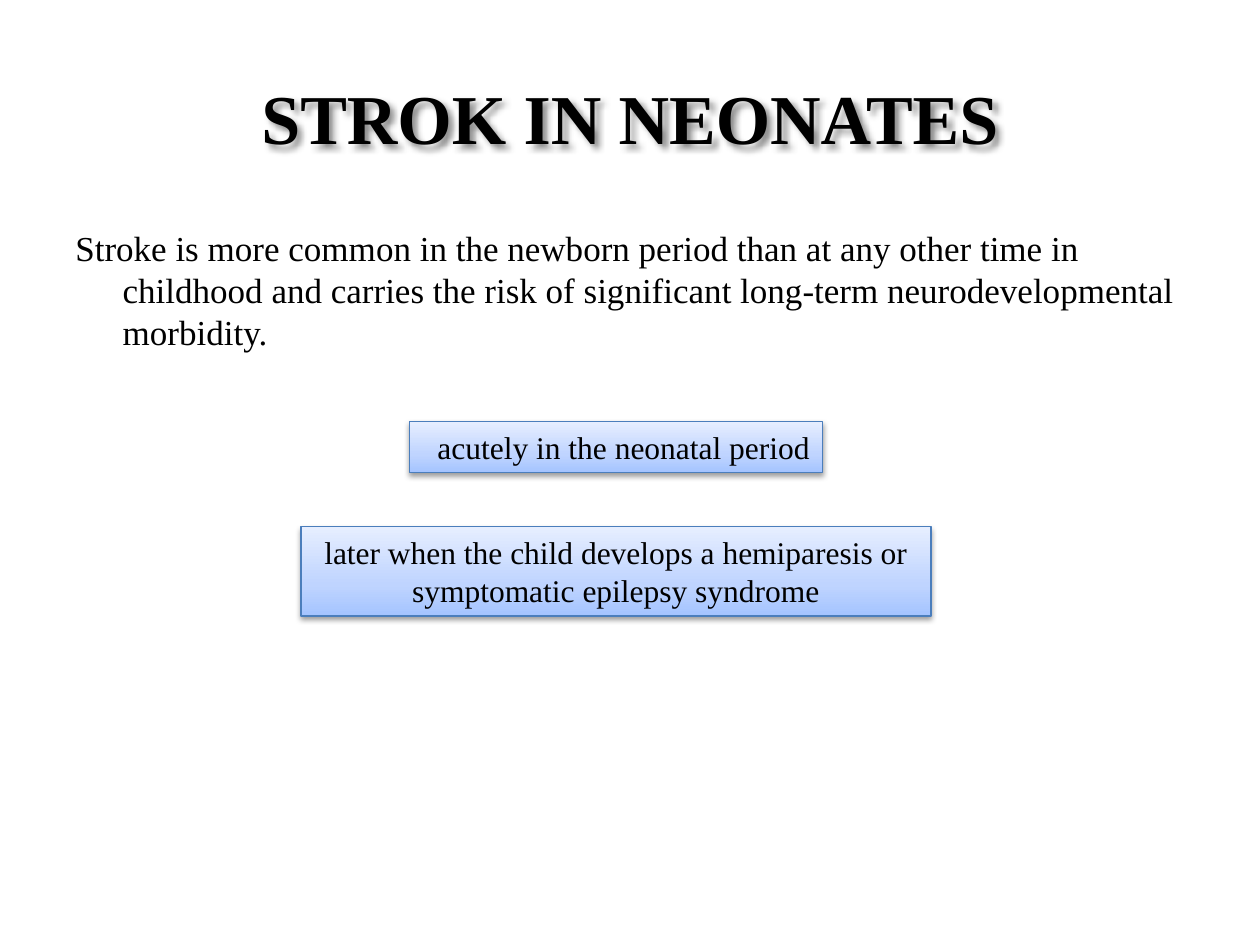
from copy import deepcopy

from lxml.etree import SubElement
from pptx import Presentation
from pptx.dml.color import RGBColor
from pptx.enum.shapes import MSO_SHAPE
from pptx.enum.text import MSO_ANCHOR as ANCHOR, PP_ALIGN as ALIGN
from pptx.oxml.ns import qn
from pptx.util import Pt

FONT = "Times New Roman"
TITLE = "STROK IN NEONATES"
BODY = ("Stroke is more common in the newborn period than at any other time in "
        "childhood and carries the risk of significant long-term "
        "neurodevelopmental morbidity.")
# text, (left, top, width, height), alignment
PRESENTATIONS = [
    ("acutely in the neonatal period", (234, 241, 236, 29), ALIGN.RIGHT),
    ("later when the child develops a hemiparesis or symptomatic epilepsy syndrome",
     (172, 301, 360, 51), ALIGN.CENTER),
]
GRADIENT = [(0, "A4C4FF"), (0.35, "BFD4FF"), (1, "E6EEFF")]
BORDER, BLACK = "4B7EBC", "000000"


def rgb(value):
    return RGBColor.from_string(value)


def set_text(sp, text, size, align=ALIGN.LEFT, anchor=ANCHOR.TOP, bold=False):
    tf = sp.text_frame
    tf.word_wrap = True
    tf.vertical_anchor = anchor
    p = tf.paragraphs[0]
    p.text = text
    p.alignment = align
    p.font.name, p.font.size, p.font.bold = FONT, Pt(size), bold
    p.font.color.rgb = rgb(BLACK)
    return p


def add_shadow(sp, blur, distance, angle, opacity):
    """Drop shadow; on an unfilled box it falls from the text."""
    sp.shadow.inherit = False
    effects = sp._element.spPr.find(qn("a:effectLst"))
    shadow = SubElement(effects, qn("a:outerShdw"), blurRad=str(Pt(blur)),
                        dist=str(Pt(distance)), dir=str(angle * 60000),
                        rotWithShape="0")
    color = SubElement(shadow, qn("a:srgbClr"), val=BLACK)
    SubElement(color, qn("a:alpha"), val=str(opacity * 1000))


def fill_gradient(sp):
    sp.fill.gradient()
    sp.fill.gradient_angle = 90
    stops = sp._element.spPr.find(".//" + qn("a:gsLst"))
    stops.insert(1, deepcopy(stops[0]))
    for stop, (position, color) in zip(sp.fill.gradient_stops, GRADIENT):
        stop.position = position
        stop.color.rgb = rgb(color)


def main():
    prs = Presentation()
    prs.slide_width, prs.slide_height = Pt(720), Pt(540)
    s = prs.slides.add_slide(prs.slide_layouts[6])

    title = s.shapes.add_textbox(Pt(36), Pt(21.6), Pt(648), Pt(90))
    set_text(title, TITLE, 40, ALIGN.CENTER, ANCHOR.MIDDLE, bold=True)
    add_shadow(title, 3, 3, 45, 43)

    body = s.shapes.add_textbox(Pt(36), Pt(126), Pt(648), Pt(200))
    p = set_text(body, BODY, 20)
    pPr = p._p.get_or_add_pPr()
    pPr.set("marL", str(Pt(27)))
    pPr.set("indent", str(Pt(-27)))

    for text, box, align in PRESENTATIONS:
        sp = s.shapes.add_shape(MSO_SHAPE.RECTANGLE, *map(Pt, box))
        fill_gradient(sp)
        sp.line.color.rgb = rgb(BORDER)
        sp.line.width = Pt(0.75)
        add_shadow(sp, 3.1, 1.6, 90, 38)
        set_text(sp, text, 18, align)

    prs.save("out.pptx")


if __name__ == "__main__":
    main()
